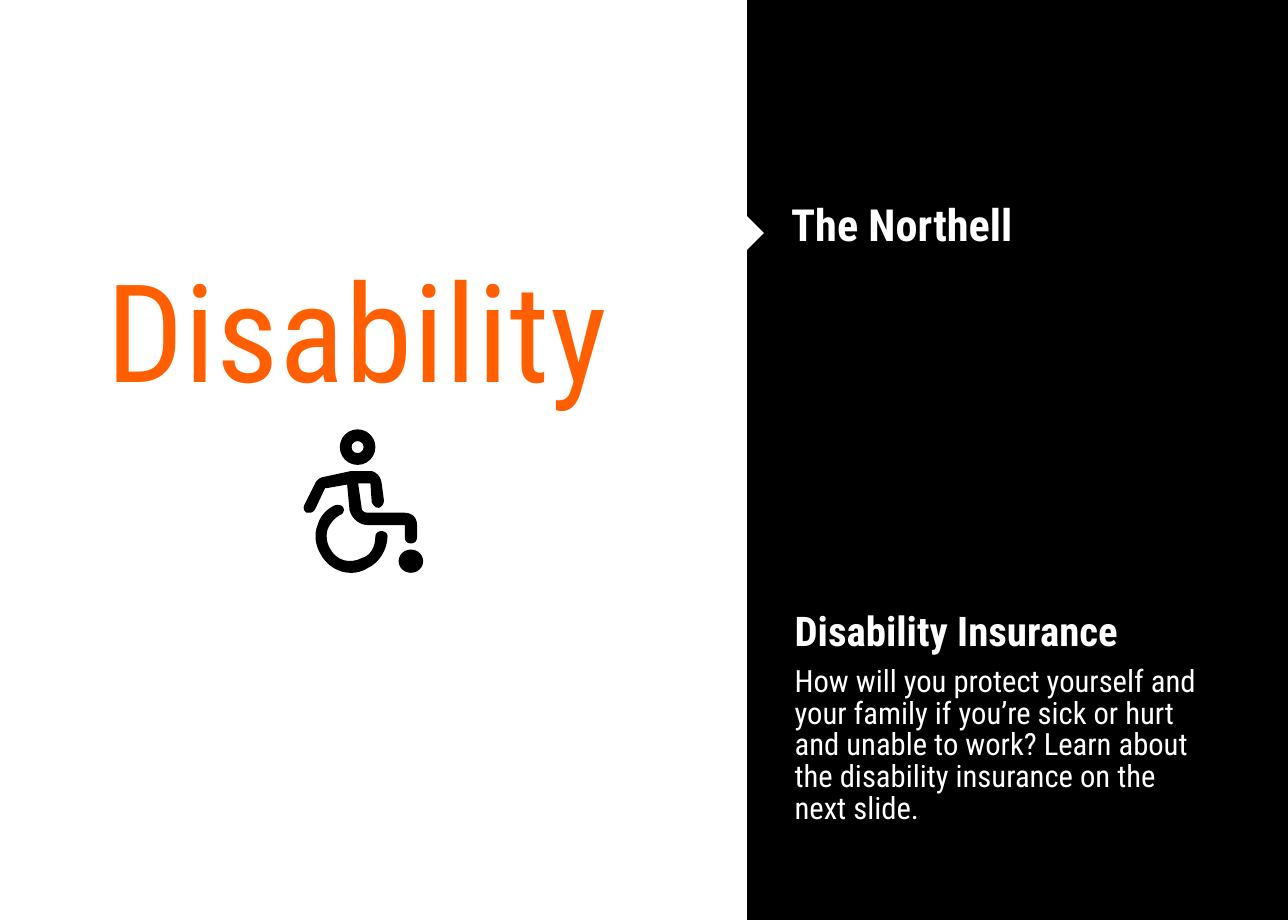
"""Build the disability section slide."""
import dataclasses
import typing

import lxml.etree
import pptx
import pptx.dml.color
import pptx.enum.shapes
import pptx.enum.text
import pptx.oxml.ns
import pptx.util

PX = 9144
ORANGE = pptx.dml.color.RGBColor(0xFF, 0x5F, 0x00)
BLACK = pptx.dml.color.RGBColor(0x00, 0x00, 0x00)
WHITE = pptx.dml.color.RGBColor(0xFF, 0xFF, 0xFF)
FONT = "Roboto Condensed"
CURVE_STEPS = 8

Point = tuple[float, float]


@dataclasses.dataclass(frozen=True)
class Box:
    left: int
    top: int
    width: int
    height: int

    def emu(self) -> list[int]:
        return [v * PX for v in (self.left, self.top, self.width, self.height)]


@dataclasses.dataclass(frozen=True)
class Outline:
    """A start point, then lines (x, y) and cubic curves (three points)."""
    start: tuple[int, int]
    segments: list[tuple[int, ...]]


@dataclasses.dataclass(frozen=True)
class Text:
    words: str
    size: int
    color: pptx.dml.color.RGBColor
    bold: bool = False
    spacing: float = 1.0
    before: int = 0
    align: pptx.enum.text.PP_ALIGN = pptx.enum.text.PP_ALIGN.LEFT


HEAD = Box(277, 350, 29, 29)
CASTER = Box(325, 448, 20, 19)
WHEEL = Outline((311, 433), [
    (308, 433, 306, 435, 306, 438), (306, 446, 302, 453, 295, 455),
    (285, 460, 274, 457, 269, 447), (266, 442, 266, 436, 267, 432),
    (269, 427, 272, 423, 277, 420), (280, 419, 281, 416, 280, 414),
    (279, 412, 276, 411, 273, 412), (266, 415, 261, 421, 259, 428),
    (256, 435, 257, 444, 261, 451), (266, 461, 276, 467, 286, 467),
    (291, 467, 295, 466, 300, 463), (309, 459, 316, 448, 316, 437),
    (316, 435, 314, 433, 311, 433)])
FIGURE = Outline((266, 398), [
    (283, 395), (285, 416), (287, 423, 293, 428, 300, 428), (330, 428),
    (330, 438), (330, 441, 332, 443, 335, 443),
    (338, 443, 340, 441, 340, 438), (340, 428),
    (340, 422, 336, 418, 330, 418), (300, 418),
    (297, 418, 295, 416, 295, 415), (292, 394), (302, 394), (303, 409),
    (304, 412, 306, 414, 309, 414), (311, 413, 313, 411, 313, 408),
    (311, 393), (310, 388, 306, 384, 302, 384), (286, 384), (263, 389),
    (262, 389, 258, 391, 257, 394), (248, 412),
    (247, 414, 248, 417, 250, 418), (251, 418, 251, 418, 252, 418),
    (254, 418, 256, 417, 257, 415), (265, 398)])
PANEL = Outline((609, 0), [
    (1050, 0), (1050, 750), (609, 750), (609, 204), (623, 190), (609, 176)])

TITLE = Text("Disability", 80, ORANGE, spacing=0.83,
             align=pptx.enum.text.PP_ALIGN.CENTER)
PROVIDER = Text("The Northell", 26, WHITE, bold=True, before=6)
SUMMARY = [
    Text("Disability Insurance", 24, WHITE, bold=True, spacing=0.86),
    Text("How will you protect yourself and your family if you’re sick or hurt "
         "and unable to work? Learn about the disability insurance on the next "
         "slide.", 18, WHITE, spacing=0.86, before=7),
]


def flatten(outline: Outline) -> list[Point]:
    points: list[Point] = [outline.start]
    for seg in outline.segments:
        if len(seg) == 2:
            points.append(seg)
            continue
        (x0, y0), (x1, y1, x2, y2, x3, y3) = points[-1], seg
        for i in range(1, CURVE_STEPS + 1):
            t = i / CURVE_STEPS
            u = 1 - t
            a, b, c, d = u ** 3, 3 * u * u * t, 3 * u * t * t, t ** 3
            points.append((a * x0 + b * x1 + c * x2 + d * x3,
                           a * y0 + b * y1 + c * y2 + d * y3))
    return points


def paint(sp: typing.Any) -> None:
    sp.shadow.inherit = False
    sp.fill.solid()
    sp.fill.fore_color.rgb = BLACK
    sp.line.fill.background()


def draw_outline(s: typing.Any, outline: Outline) -> typing.Any:
    points = [(x * PX, y * PX) for x, y in flatten(outline)]
    builder = s.shapes.build_freeform(*points[0])
    builder.add_line_segments(points[1:], close=True)
    sp = builder.convert_to_shape()
    paint(sp)
    return sp


def draw_icon(s: typing.Any) -> None:
    head = s.shapes.add_shape(pptx.enum.shapes.MSO_SHAPE.DONUT, *HEAD.emu())
    head.adjustments[0] = 0.33
    caster = s.shapes.add_shape(pptx.enum.shapes.MSO_SHAPE.OVAL, *CASTER.emu())
    for sp in (head, caster):
        paint(sp)
    wheel = draw_outline(s, WHEEL)
    figure = draw_outline(s, FIGURE)
    s.shapes.add_group_shape([head, caster, wheel, figure])


def write(sp: typing.Any, box: Box, margins: tuple[int, int, int, int],
          texts: list[Text]) -> None:
    sp.left, sp.top, sp.width, sp.height = box.emu()
    tf = sp.text_frame
    tf.word_wrap = True
    tf.auto_size = pptx.enum.text.MSO_AUTO_SIZE.NONE
    tf.vertical_anchor = pptx.enum.text.MSO_ANCHOR.TOP
    (tf.margin_left, tf.margin_top,
     tf.margin_right, tf.margin_bottom) = [m * PX for m in margins]
    for i, text in enumerate(texts):
        p = tf.add_paragraph() if i else tf.paragraphs[0]
        p.text = text.words
        p.alignment = text.align
        p.line_spacing = text.spacing
        p.space_before = pptx.util.Pt(text.before)
        p.font.name = FONT
        p.font.size = pptx.util.Pt(text.size)
        p.font.bold = text.bold
        p.font.color.rgb = text.color


def remove_bullet(p: typing.Any) -> None:
    props = p._p.get_or_add_pPr()
    props.set("marL", "0")
    props.set("indent", "0")
    bullet = lxml.etree.Element(pptx.oxml.ns.qn("a:buNone"))
    props.find(pptx.oxml.ns.qn("a:defRPr")).addprevious(bullet)


def main() -> None:
    prs = pptx.Presentation()
    prs.slide_width, prs.slide_height = 1050 * PX, 750 * PX
    s = prs.slides.add_slide(prs.slide_layouts[1])
    title, body = s.shapes.title, s.placeholders[1]

    write(title, Box(43, 218, 507, 100), (0, 5, 10, 5), [TITLE])
    title.text_frame.paragraphs[0].runs[0]._r.get_or_add_rPr().set("spc", "50")
    draw_icon(s)
    draw_outline(s, PANEL)

    write(body, Box(645, 161, 387, 127), (0, 0, 0, 0), [PROVIDER])
    remove_bullet(body.text_frame.paragraphs[0])
    s.shapes.element.append(body.element)

    box = Box(638, 495, 357, 185)
    summary = s.shapes.add_textbox(*box.emu())
    write(summary, box, (10, 5, 10, 5), SUMMARY)
    prs.save("out.pptx")


if __name__ == "__main__":
    main()
